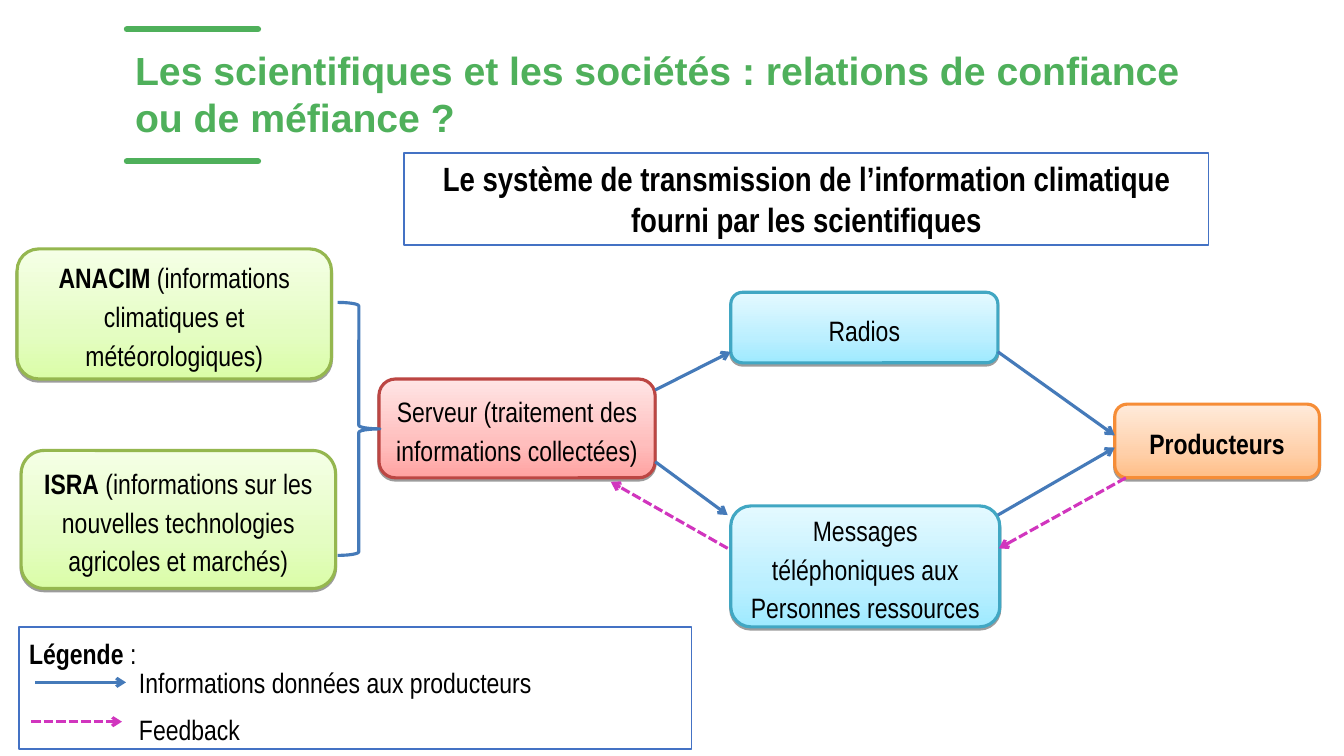
from copy import deepcopy
from dataclasses import dataclass

from lxml import etree
from pptx import Presentation
from pptx.dml.color import RGBColor
from pptx.enum import dml, shapes, text
from pptx.oxml.ns import qn
from pptx.util import Pt


@dataclass(frozen=True)
class Theme:
    title_font: str = "Arial"
    body_font: str = "Arial Narrow"
    title_size: int = 28
    caption_size: int = 24
    body_size: int = 20
    title: str = "4FB05B"
    ink: str = "000000"
    paper: str = "FFFFFF"
    frame: str = "4472C4"
    info: str = "457AB9"
    feedback: str = "D135BE"
    # Outline, then gradient colours from bottom to top
    green: tuple = ("95B74F", "DAFDA7", "E4FDC2", "F5FFE6")
    red: tuple = ("BC4643", "FFA2A1", "FFBEBD", "FFE5E5")
    blue: tuple = ("41A7C3", "9EEAFF", "BBEFFF", "E4F9FF")
    orange: tuple = ("F68D37", "FFBE86", "FFD0AA", "FFEBDB")


def rgb(value):
    return RGBColor.from_string(value)


class Deck:
    def __init__(self, theme):
        self.t = theme
        self.prs = Presentation()
        self.prs.slide_width, self.prs.slide_height = Pt(960), Pt(540)
        self.s = self.prs.slides.add_slide(self.prs.slide_layouts[6])

    def paragraph(self, p, bold="", plain="", size=None, font=None, color=None,
                  align=text.PP_ALIGN.LEFT, spacing=None, after=0):
        """Fill a paragraph with a bold part followed by a plain part."""
        p.text = bold or plain
        if bold and plain:
            p.add_run().text = plain
        p.alignment, p.space_after = align, Pt(after)
        if spacing:
            p.line_spacing = spacing
        for i, r in enumerate(p.runs):
            r.font.name = font or self.t.body_font
            r.font.size = Pt(size or self.t.body_size)
            r.font.bold = bool(bold) and i == 0
            r.font.color.rgb = rgb(color or self.t.ink)

    def shape(self, kind, box, line, width, fill=None):
        sp = self.s.shapes.add_shape(kind, *map(Pt, box))
        sp.shadow.inherit = False
        sp.line.color.rgb = rgb(line)
        sp.line.width = Pt(width)
        if fill:
            sp.fill.solid()
            sp.fill.fore_color.rgb = rgb(fill)
        else:
            sp.fill.background()
        return sp

    def frame(self, box, fill=None, **style):
        """Plain rectangle with text at the top."""
        sp = self.shape(shapes.MSO_SHAPE.RECTANGLE, box, self.t.frame, 1, fill)
        sp.text_frame.word_wrap = True
        sp.text_frame.vertical_anchor = text.MSO_ANCHOR.TOP
        self.paragraph(sp.text_frame.paragraphs[0], **style)

    def node(self, box, palette, bold="", plain=""):
        """Rounded box with a gradient and a hard shadow."""
        outline, *colors = palette
        sp = self.shape(shapes.MSO_SHAPE.ROUNDED_RECTANGLE, box, outline, 2.25)
        sp.fill.gradient()
        sp.fill.gradient_angle = 90
        stops = sp._element.spPr.find(".//" + qn("a:gsLst"))
        stops.append(deepcopy(stops[0]))
        for stop, pos, color in zip(sp.fill.gradient_stops, (0, 0.35, 1), colors):
            stop.position = pos
            stop.color.rgb = rgb(color)
        effects = sp._element.spPr.find(qn("a:effectLst"))
        shadow = etree.SubElement(effects, qn("a:outerShdw"), blurRad="0",
                                  dist=str(Pt(1.6)), dir="5400000", rotWithShape="0")
        black = etree.SubElement(shadow, qn("a:srgbClr"), val=self.t.ink)
        etree.SubElement(black, qn("a:alpha"), val="38000")
        tf = sp.text_frame
        tf.word_wrap = True
        tf.vertical_anchor = text.MSO_ANCHOR.MIDDLE
        self.paragraph(tf.paragraphs[0], bold, plain, align=text.PP_ALIGN.CENTER,
                       spacing=1.15, after=10)

    def brace(self, box):
        self.shape(shapes.MSO_SHAPE.RIGHT_BRACE, box, self.t.info, 2.25)

    def textbox(self, box, paragraphs, margin=7.2, **style):
        tf = self.s.shapes.add_textbox(*map(Pt, box)).text_frame
        tf.word_wrap = True
        tf.margin_left = tf.margin_right = Pt(margin)
        for i, parts in enumerate(paragraphs):
            p = tf.add_paragraph() if i else tf.paragraphs[0]
            self.paragraph(p, **parts, **style)

    def line(self, start, end, color, width=2.25):
        c = self.s.shapes.add_connector(
            shapes.MSO_CONNECTOR.STRAIGHT, *map(Pt, (*start, *end)))
        c.line.color.rgb = rgb(color)
        c.line.width = Pt(width)
        etree.SubElement(c._element.spPr, qn("a:effectLst"))
        return c

    def rule(self, y):
        c = self.line((90.7, y), (184.3, y), self.t.title, 4.5)
        c._element.spPr.find(qn("a:ln")).set("cap", "rnd")

    def arrow(self, start, end, feedback=False):
        c = self.line(start, end, self.t.feedback if feedback else self.t.info)
        if feedback:
            c.line.dash_style = dml.MSO_LINE.SQUARE_DOT
        ln = c._element.spPr.find(qn("a:ln"))
        etree.SubElement(ln, qn("a:tailEnd"), type="arrow")


def main():
    t = Theme()
    d = Deck(t)

    # Title between two rules
    d.textbox((93.6, 29.5, 790.6, 74.9),
              [{"bold": "Les scientifiques et les sociétés : relations de confiance "
                        "ou de méfiance ?"}],
              margin=2.9, size=t.title_size, font=t.title_font, color=t.title)
    for y in (115.2, 20.9):
        d.rule(y)

    # Caption
    d.frame((288.7, 109.4, 574.6, 65.5), t.paper,
            bold="Le système de transmission de l’information climatique "
                 "fourni par les scientifiques",
            size=t.caption_size, align=text.PP_ALIGN.CENTER)

    # Sources, server, relays and producers
    d.node((12.2, 177.8, 224.6, 92.9), t.green, "ANACIM",
           " (informations climatiques et météorologiques)")
    d.node((15.1, 321.8, 224.6, 98.6), t.green, "ISRA",
           " (informations sur les nouvelles technologies agricoles et marchés)")
    d.node((270.7, 270.7, 197.3, 70.6), t.red,
           plain="Serveur (traitement des informations collectées)")
    d.brace((241.2, 216, 30.2, 180.7))
    d.node((522, 208.8, 190.8, 50.4), t.blue, plain="Radios")
    d.node((522, 361.4, 192.2, 86.4), t.blue,
           plain="Messages téléphoniques aux Personnes ressources")
    d.node((796.3, 288.7, 146.2, 52.6), t.orange, "Producteurs")

    # Information flow, then feedback
    for start, end in (((468, 278.6), (522, 251.3)),
                       ((468, 329.8), (519.8, 367.9)),
                       ((712.8, 251.3), (796.3, 311)),
                       ((712.8, 367.9), (796.3, 319.7))):
        d.arrow(start, end)
    for start, end in (((804.2, 341.3), (713.5, 391.7)),
                       ((519.8, 391.7), (436.3, 344.2))):
        d.arrow(start, end, feedback=True)

    # Legend
    d.frame((13.7, 447.8, 480.2, 87.1), bold="Légende", plain=" :",
            spacing=1.15, after=10)
    d.textbox((92.2, 471.6, 385.9, 65.5),
              [{"plain": "Informations données aux producteurs"},
               {"plain": "Feedback"}], after=10)
    d.arrow((25.2, 487.4), (90, 487.4))
    d.arrow((22.3, 515.5), (87.1, 515.5), feedback=True)

    d.prs.save("out.pptx")


if __name__ == "__main__":
    main()
